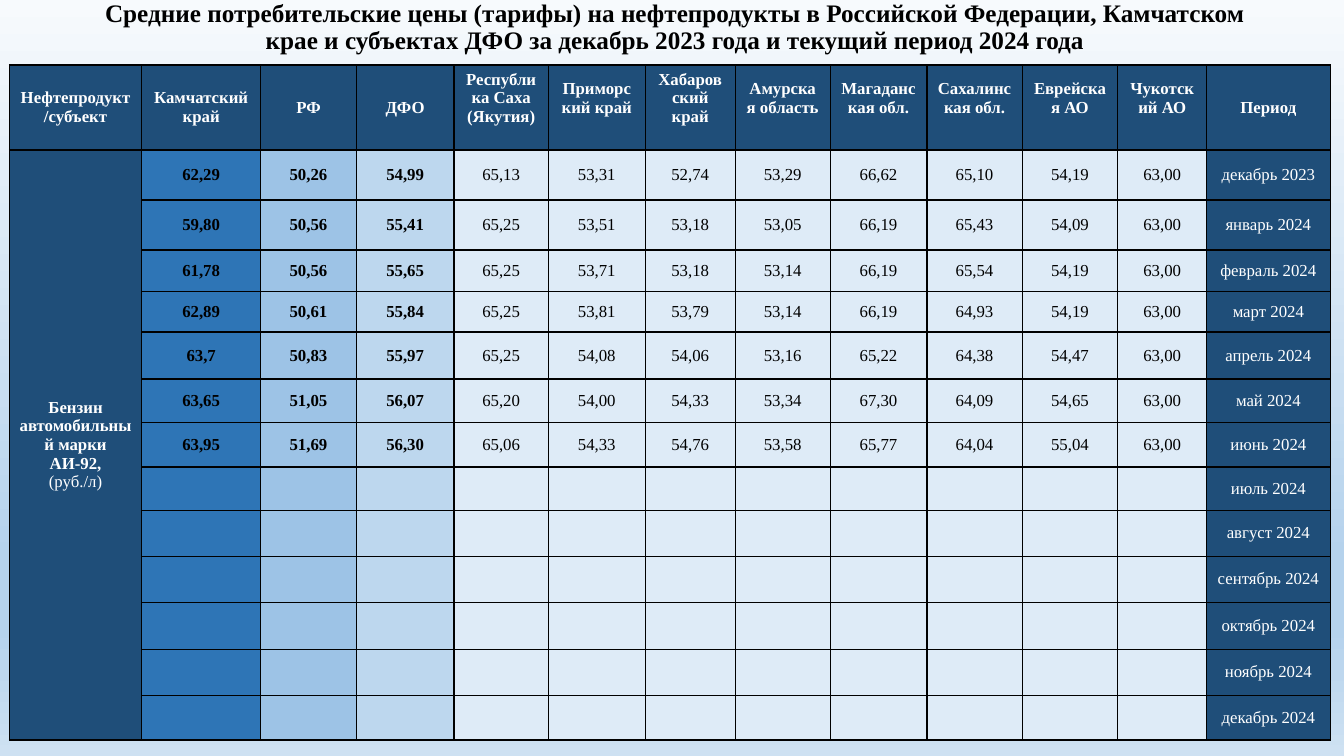
from lxml.etree import SubElement
from pptx import Presentation
from pptx.dml.color import RGBColor
from pptx.enum.text import MSO_ANCHOR, MSO_AUTO_SIZE, PP_ALIGN
from pptx.oxml.ns import qn
from pptx.util import Cm, Pt

BLACK = RGBColor(0x00, 0x00, 0x00)
WHITE = RGBColor(0xFF, 0xFF, 0xFF)
NAVY = RGBColor(0x1F, 0x4E, 0x79)
BLUE = RGBColor(0x2E, 0x75, 0xB6)
SKY = RGBColor(0x9D, 0xC3, 0xE6)
PALE = RGBColor(0xBD, 0xD7, 0xEE)
ICE = RGBColor(0xDE, 0xEB, 0xF7)
BACKGROUND_STOPS = [
    (0, RGBColor(0xF7, 0xFA, 0xFD)),
    (74, RGBColor(0xB5, 0xD2, 0xEC)),
    (83, RGBColor(0xB5, 0xD2, 0xEC)),
    (100, RGBColor(0xCE, 0xE1, 0xF2)),
]

TITLE = ("Средние потребительские цены (тарифы) на нефтепродукты в Российской Федерации, "
         "Камчатском крае и субъектах ДФО за декабрь 2023 года и текущий период 2024 года")
HEADERS = ["Нефтепродукт/субъект", "Камчатский край", "РФ", "ДФО",
           "Республика Саха (Якутия)", "Приморский край", "Хабаровский край",
           "Амурская область", "Магаданская обл.", "Сахалинская обл.",
           "Еврейская АО", "Чукотский АО", "Период"]
PERIODS = ["декабрь 2023"] + [f"{month} 2024" for month in (
    "январь", "февраль", "март", "апрель", "май", "июнь", "июль",
    "август", "сентябрь", "октябрь", "ноябрь", "декабрь")]
PRICES = [line.split() for line in (
    "62,29 50,26 54,99 65,13 53,31 52,74 53,29 66,62 65,10 54,19 63,00",
    "59,80 50,56 55,41 65,25 53,51 53,18 53,05 66,19 65,43 54,09 63,00",
    "61,78 50,56 55,65 65,25 53,71 53,18 53,14 66,19 65,54 54,19 63,00",
    "62,89 50,61 55,84 65,25 53,81 53,79 53,14 66,19 64,93 54,19 63,00",
    "63,7 50,83 55,97 65,25 54,08 54,06 53,16 65,22 64,38 54,47 63,00",
    "63,65 51,05 56,07 65,20 54,00 54,33 53,34 67,30 64,09 54,65 63,00",
    "63,95 51,69 56,30 65,06 54,33 54,76 53,58 65,77 64,04 55,04 63,00",
)]
COLUMN_WIDTHS = [3.33, 3.0, 2.41, 2.46, 2.38, 2.44, 2.27, 2.39, 2.44, 2.4, 2.41, 2.24, 3.11]
ROW_HEIGHTS = [2.13, 1.26, 1.26, 1.05, 1.02, 1.18, 1.09, 1.13, 1.09, 1.16, 1.16, 1.18, 1.16, 1.13]
COLUMN_FILLS = [NAVY, BLUE, SKY, PALE] + [ICE] * 8 + [NAVY]


def write(para, text, size=12, color=BLACK, bold=False):
    para.alignment = PP_ALIGN.CENTER
    span = para.add_run()
    span.text = text
    span.font.name = "Times New Roman"
    span.font.size = Pt(size)
    span.font.bold = bold
    span.font.color.rgb = color


def style_cell(cell, fill):
    properties = cell._tc.get_or_add_tcPr()
    for side in ("a:lnL", "a:lnR", "a:lnT", "a:lnB"):
        line = SubElement(properties, qn(side), w=str(Pt(1)))
        solid = SubElement(line, qn("a:solidFill"))
        SubElement(solid, qn("a:srgbClr"), val=str(BLACK))
    cell.fill.solid()
    cell.fill.fore_color.rgb = fill
    cell.vertical_anchor = MSO_ANCHOR.MIDDLE


deck = Presentation()
deck.slide_width = Cm(33.87)
deck.slide_height = Cm(19.05)
page = deck.slides.add_slide(deck.slide_layouts[5])

# Background gradient, running from top to bottom
backdrop = page.background.fill
backdrop.gradient()
backdrop.gradient_angle = 270
stop_list = page.background._cSld.find(".//" + qn("a:gsLst"))
stop_list.clear()
for percent, color in BACKGROUND_STOPS:
    stop = SubElement(stop_list, qn("a:gs"), pos=str(percent * 1000))
    SubElement(stop, qn("a:srgbClr"), val=str(color))

# Title
title = page.shapes.title
title.left, title.top, title.width, title.height = Cm(2.34), Cm(0), Cm(29.34), Cm(1.4)
title.text_frame.word_wrap = True
title.text_frame.auto_size = MSO_AUTO_SIZE.NONE
title.text_frame.vertical_anchor = MSO_ANCHOR.MIDDLE
title.text_frame.paragraphs[0].line_spacing = 0.9
write(title.text_frame.paragraphs[0], TITLE, size=18, bold=True)

# Price table: sizes, fills and borders
table = page.shapes.add_table(
    len(ROW_HEIGHTS), len(COLUMN_WIDTHS), Cm(0.24), Cm(1.64),
    Cm(sum(COLUMN_WIDTHS)), Cm(sum(ROW_HEIGHTS))).table
table.horz_banding = False
for column, width in zip(table.columns, COLUMN_WIDTHS):
    column.width = Cm(width)
for row_index, height in enumerate(ROW_HEIGHTS):
    table.rows[row_index].height = Cm(height)
    for column_index, fill in enumerate(COLUMN_FILLS):
        style_cell(table.cell(row_index, column_index), NAVY if row_index == 0 else fill)

# Header row; the region names sit a little higher
for column_index, header in enumerate(HEADERS):
    cell = table.cell(0, column_index)
    if 4 <= column_index <= 11:
        cell.margin_bottom = Cm(0.6)
    write(cell.text_frame.paragraphs[0], header, color=WHITE, bold=True)

# Product name beside all periods
product = table.cell(1, 0)
product.merge(table.cell(len(PERIODS), 0))
frame = product.text_frame
write(frame.paragraphs[0], "Бензин автомобильный марки", color=WHITE, bold=True)
write(frame.add_paragraph(), "АИ-92,", color=WHITE, bold=True)
write(frame.add_paragraph(), "(руб./л)", color=WHITE)

# Prices, with the three summary columns in bold
for row_index, prices in enumerate(PRICES, start=1):
    for column_index, price in enumerate(prices, start=1):
        write(table.cell(row_index, column_index).text_frame.paragraphs[0], price,
              bold=column_index <= 3)

# Periods
for row_index, period in enumerate(PERIODS, start=1):
    write(table.cell(row_index, 12).text_frame.paragraphs[0], period, color=WHITE)

deck.save("out.pptx")
